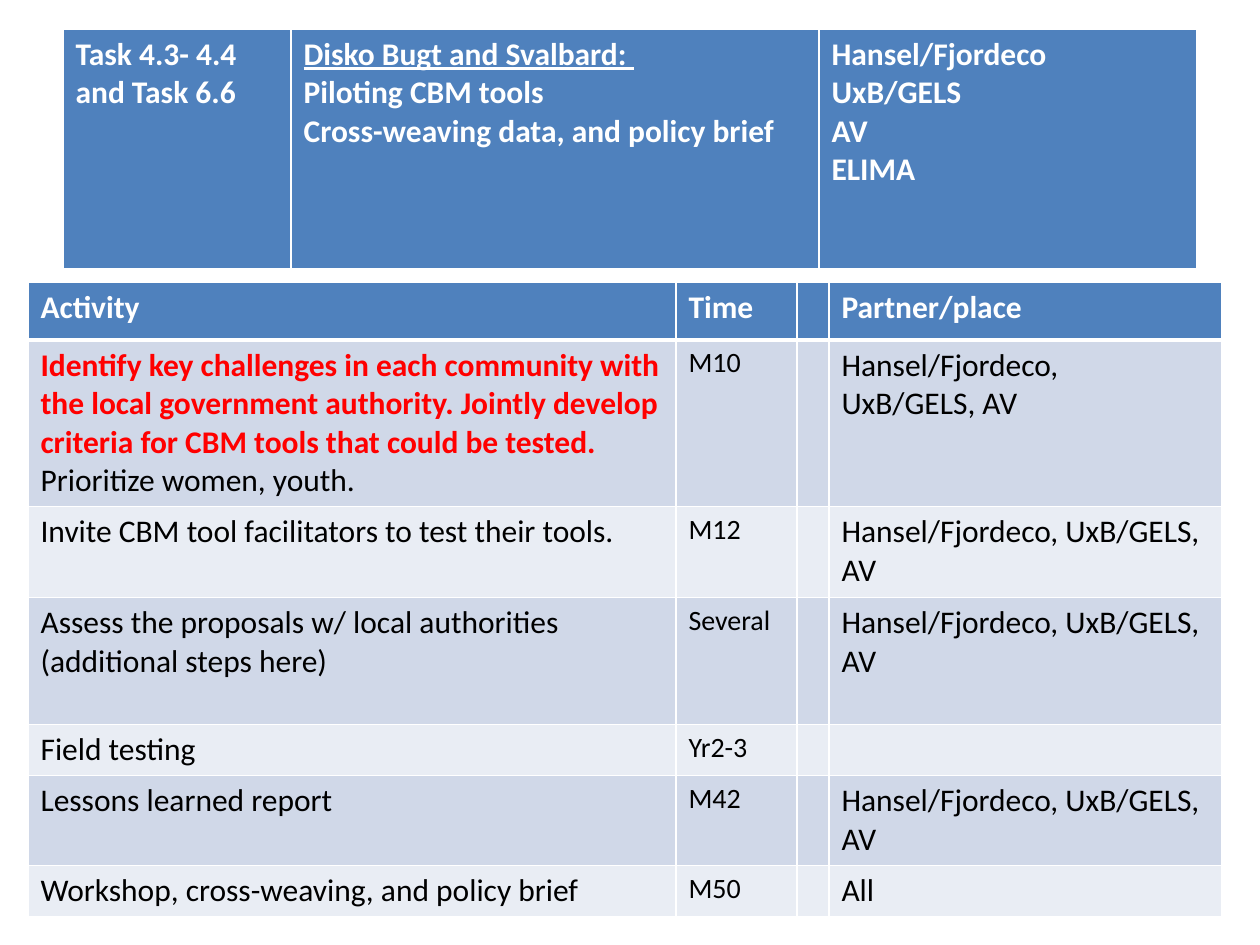
"""Build a task slide with a heading table and an activity table."""
from lxml import etree
from pptx import Presentation
from pptx.dml.color import RGBColor
from pptx.oxml.ns import qn
from pptx.util import Pt

PX = 914400 // 126
BLUE = RGBColor(0x4F, 0x81, 0xBD)
BAND_DARK = RGBColor(0xD0, 0xD8, 0xE8)
BAND_LIGHT = RGBColor(0xE9, 0xED, 0xF4)
WHITE = RGBColor(0xFF, 0xFF, 0xFF)
BLACK = RGBColor(0x00, 0x00, 0x00)
RED = RGBColor(0xFF, 0x00, 0x00)

PARTNERS = "Hansel/Fjordeco, UxB/GELS, AV"
TASK_ROWS = [[
    "Task 4.3- 4.4 and Task 6.6",
    "Disko Bugt and Svalbard: \nPiloting CBM tools\nCross-weaving data, and policy brief",
    "Hansel/Fjordeco\nUxB/GELS\nAV\nELIMA",
]]
KEY_STEP = ("Identify key challenges in each community with the local government authority. "
            "Jointly develop criteria for CBM tools that could be tested. ")
ACTIVITY_ROWS = [
    ["Activity", "Time", "", "Partner/place"],
    [KEY_STEP, "M10", "", "Hansel/Fjordeco,\nUxB/GELS, AV"],
    ["Invite CBM tool facilitators to test their tools.", "M12", "", PARTNERS],
    ["Assess the proposals w/ local authorities\n(additional steps here)", "Several", "", PARTNERS],
    ["Field testing", "Yr2-3", "", ""],
    ["Lessons learned report", "M42", "", PARTNERS],
    ["Workshop, cross-weaving, and policy brief", "M50", "", "All"],
]


def style_span(span, size, color, bold):
    span.font.name = "Calibri"
    span.font.size = Pt(size)
    span.font.color.rgb = color
    span.font.bold = bold


def add_grid(page, left, top, widths, heights, rows):
    table = page.shapes.add_table(len(rows), len(widths), left * PX, top * PX,
                                  sum(widths) * PX, sum(heights) * PX).table
    for column, width in zip(table.columns, widths):
        column.width = width * PX
    for row_index, (row, height, texts) in enumerate(zip(table.rows, heights, rows)):
        row.height = height * PX
        header = row_index == 0
        band = BAND_DARK if row_index % 2 else BAND_LIGHT
        for column_index, (cell, text) in enumerate(zip(row.cells, texts)):
            properties = cell._tc.get_or_add_tcPr()
            for side in ("lnL", "lnR", "lnT", "lnB"):
                thick = (header and side == "lnB") or (row_index == 1 and side == "lnT")
                line = etree.SubElement(properties, qn("a:" + side), w=str(Pt(3 if thick else 1)))
                fill = etree.SubElement(line, qn("a:solidFill"))
                etree.SubElement(fill, qn("a:srgbClr"), val=str(WHITE))
            cell.fill.solid()
            cell.fill.fore_color.rgb = BLUE if header else band
            cell.text_frame.text = text
            size = 16 if column_index == 1 and not header else 18
            for para in cell.text_frame.paragraphs:
                for span in para.runs:
                    style_span(span, size, WHITE if header else BLACK, header)
    return table


deck = Presentation()
deck.slide_width = 1260 * PX
deck.slide_height = 945 * PX
page = deck.slides.add_slide(deck.slide_layouts[6])

task_table = add_grid(page, 63, 29, [228, 528, 378], [241], TASK_ROWS)
task_table.cell(0, 1).text_frame.paragraphs[0].runs[0].font.underline = True

activity_table = add_grid(page, 28, 282, [648, 121, 32, 393],
                          [58, 166, 91, 127, 51, 90, 51], ACTIVITY_ROWS)
key_para = activity_table.cell(1, 0).text_frame.paragraphs[0]
style_span(key_para.runs[0], 18, RED, True)
priority_span = key_para.add_run()
priority_span.text = "Prioritize women, youth."
style_span(priority_span, 18, BLACK, False)

deck.save("out.pptx")
